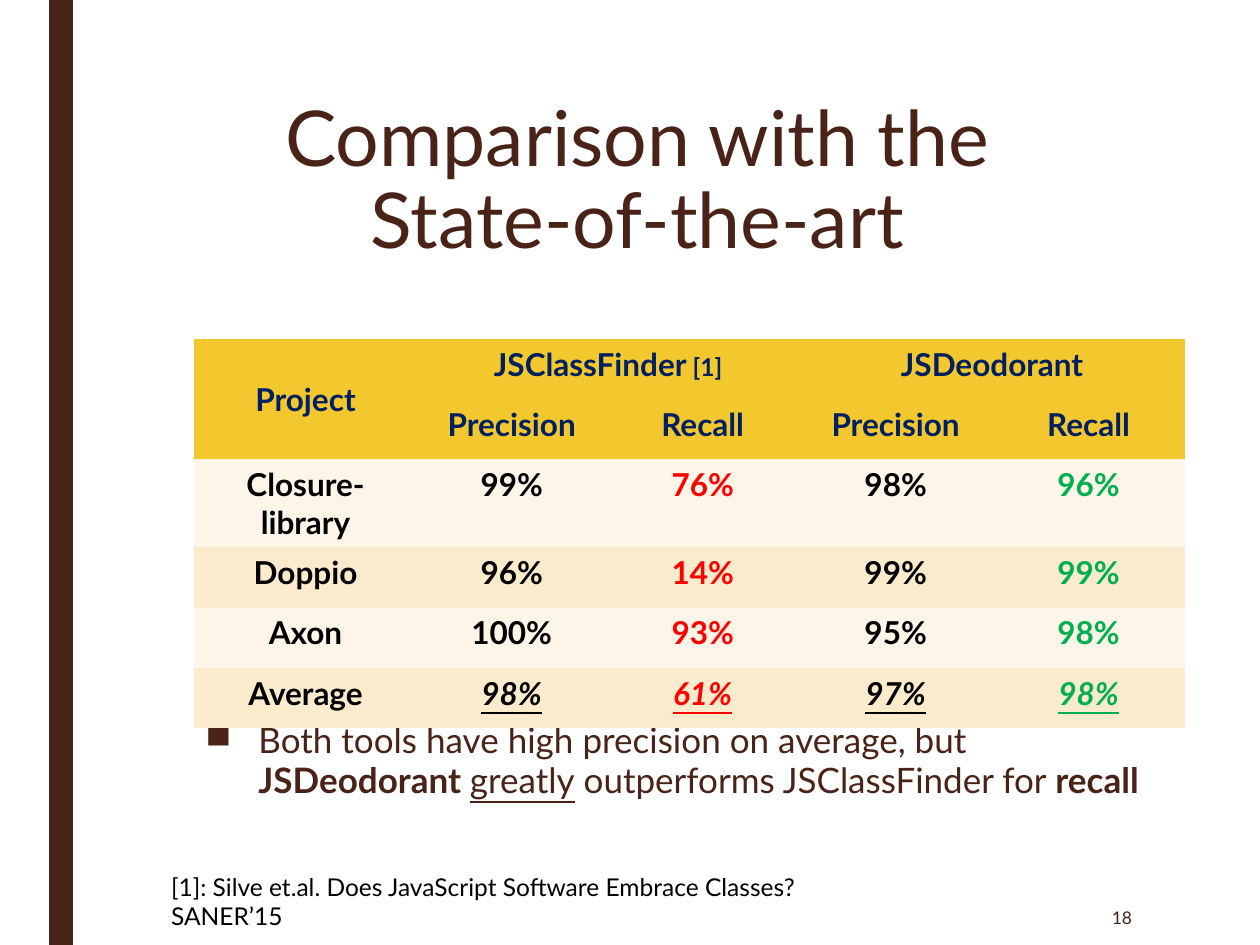
from lxml import etree
from pptx import Presentation
from pptx.dml.color import RGBColor
from pptx.enum.shapes import MSO_SHAPE
from pptx.enum.text import MSO_ANCHOR, MSO_AUTO_SIZE, PP_ALIGN
from pptx.oxml.ns import qn
from pptx.util import Cm, Pt

RECTANGLE = MSO_SHAPE.RECTANGLE
LEFT, CENTER, RIGHT = PP_ALIGN.LEFT, PP_ALIGN.CENTER, PP_ALIGN.RIGHT
TOP, MIDDLE = MSO_ANCHOR.TOP, MSO_ANCHOR.MIDDLE
NO_AUTOFIT = MSO_AUTO_SIZE.NONE

BROWN = RGBColor(0x4A, 0x23, 0x18)
NAVY = RGBColor(0x00, 0x20, 0x60)
BLACK = RGBColor(0x00, 0x00, 0x00)
RED = RGBColor(0xFF, 0x00, 0x00)
GREEN = RGBColor(0x00, 0xB0, 0x50)
GOLD = RGBColor(0xF3, 0xC8, 0x2E)
BANDS = (RGBColor(0xFD, 0xF5, 0xE8), RGBColor(0xFA, 0xEB, 0xCD))

FONT = "Lato"
PLAIN_TABLE_STYLE = "{2D5ABB26-0587-4C30-8999-92F81FD0307C}"
COLUMN_WIDTHS = (4.5, 3.81, 3.89, 3.89, 3.89)
COLUMN_COLORS = (BLACK, BLACK, RED, BLACK, GREEN)
HEADER = (
    ("Project", "JSClassFinder", "", "JSDeodorant", ""),
    ("", "Precision", "Recall", "Precision", "Recall"),
)
RESULTS = (
    ("Closure-library", "99%", "76%", "98%", "96%"),
    ("Doppio", "96%", "14%", "99%", "99%"),
    ("Axon", "100%", "93%", "95%", "98%"),
    ("Average", "98%", "61%", "97%", "98%"),
)


def format_paragraph(paragraph, size, color, alignment=LEFT, bold=False):
    """Set the alignment and font of a whole paragraph."""
    paragraph.alignment = alignment
    font = paragraph.font
    font.name, font.size, font.bold = FONT, Pt(size), bold
    font.color.rgb = color


def add_text_box(slide, box, anchor=TOP):
    """Add a wrapping text box and return its first paragraph."""
    frame = slide.shapes.add_textbox(*map(Cm, box)).text_frame
    frame.word_wrap = True
    frame.vertical_anchor = anchor
    return frame.paragraphs[0]


def add_side_bar(slide, box):
    """Draw the vertical bar at the left."""
    bar = slide.shapes.add_shape(RECTANGLE, *map(Cm, box))
    bar.shadow.inherit = False
    bar.fill.solid()
    bar.fill.fore_color.rgb = BROWN
    bar.line.fill.background()


def set_title(slide, box, text):
    """Place and format the title placeholder."""
    title = slide.shapes.title
    title.left, title.top, title.width, title.height = map(Cm, box)
    frame = title.text_frame
    frame.text = text
    frame.auto_size = NO_AUTOFIT
    frame.vertical_anchor = TOP
    paragraph = frame.paragraphs[0]
    format_paragraph(paragraph, 44, BROWN, CENTER)
    paragraph.line_spacing = 0.89


def add_conclusion(slide, box):
    """Write the bulleted conclusion with its emphasised words."""
    paragraph = add_text_box(slide, box)
    format_paragraph(paragraph, 20, BROWN)
    paragraph.line_spacing = 0.94
    paragraph.space_before, paragraph.space_after = Pt(10), Pt(2)
    for text, bold, underline in (
        ("Both tools have high precision on average, but ", False, False),
        ("JSDeodorant ", True, False),
        ("greatly", False, True),
        (" outperforms JSClassFinder for ", False, False),
        ("recall", True, False),
    ):
        run = paragraph.add_run()
        run.text = text
        run.font.bold, run.font.underline = bold, underline
    properties = paragraph._p.get_or_add_pPr()
    properties.set("marL", str(Cm(1.07)))
    properties.set("indent", str(-Cm(1.07)))
    bullet = etree.Element(qn("a:buChar"), char="■")
    properties.find(qn("a:defRPr")).addprevious(bullet)


def fill_cell(cell, text, fill, color):
    """Fill a table cell and write its centred bold text."""
    cell.fill.solid()
    cell.fill.fore_color.rgb = fill
    paragraph = cell.text_frame.paragraphs[0]
    paragraph.text = text
    format_paragraph(paragraph, 18, color, CENTER, True)
    return paragraph


def add_results_table(slide, box):
    """Build the table of precision and recall per project."""
    rows = HEADER + RESULTS
    shape = slide.shapes.add_table(len(rows), len(COLUMN_WIDTHS), *map(Cm, box))
    table = shape.table
    table._tbl.tblPr.find(qn("a:tableStyleId")).text = PLAIN_TABLE_STYLE
    for column, width in zip(table.columns, COLUMN_WIDTHS):
        column.width = Cm(width)
    for row_index, row in enumerate(rows):
        is_header = row_index < len(HEADER)
        fill = GOLD if is_header else BANDS[row_index % 2]
        for column_index, text in enumerate(row):
            color = NAVY if is_header else COLUMN_COLORS[column_index]
            cell = table.cell(row_index, column_index)
            paragraph = fill_cell(cell, text, fill, color)
            if row_index == len(rows) - 1 and column_index > 0:
                paragraph.font.italic = paragraph.font.underline = True
                for run in paragraph.runs:
                    run.font.italic = run.font.underline = True
    reference = table.cell(0, 1).text_frame.paragraphs[0].add_run()
    reference.text = " [1]"
    reference.font.size = Pt(14)
    table.cell(0, 0).vertical_anchor = MIDDLE
    for first, last in (((0, 0), (1, 0)), ((0, 1), (0, 2)), ((0, 3), (0, 4))):
        table.cell(*first).merge(table.cell(*last))


def add_label(slide, box, text, size, color, alignment=LEFT, anchor=TOP):
    """Write a single-style line of text."""
    paragraph = add_text_box(slide, box, anchor)
    paragraph.text = text
    format_paragraph(paragraph, size, color, alignment)


def main():
    """Build the slide and save it."""
    presentation = Presentation()
    presentation.slide_width, presentation.slide_height = Cm(25.4), Cm(19.05)
    slide = presentation.slides.add_slide(presentation.slide_layouts[5])
    add_side_bar(slide, (0.99, 0, 0.48, 19.05))
    set_title(slide, (2.84, 1.9, 20.02, 4.11), "Comparison with the\vState-of-the-art")
    add_conclusion(slide, (3.89, 14.43, 20.02, 2.08))
    add_label(slide, (19.74, 17.93, 3.33, 1.12), "18", 10, BROWN, RIGHT, MIDDLE)
    add_results_table(slide, (3.91, 6.83, 19.98, 7.28))
    add_label(
        slide, (3.2, 17.45, 15.34, 0.86),
        "[1]: Silve et.al. Does JavaScript Software Embrace Classes? SANER’15",
        14, BLACK,
    )
    presentation.save("out.pptx")


if __name__ == "__main__":
    main()
